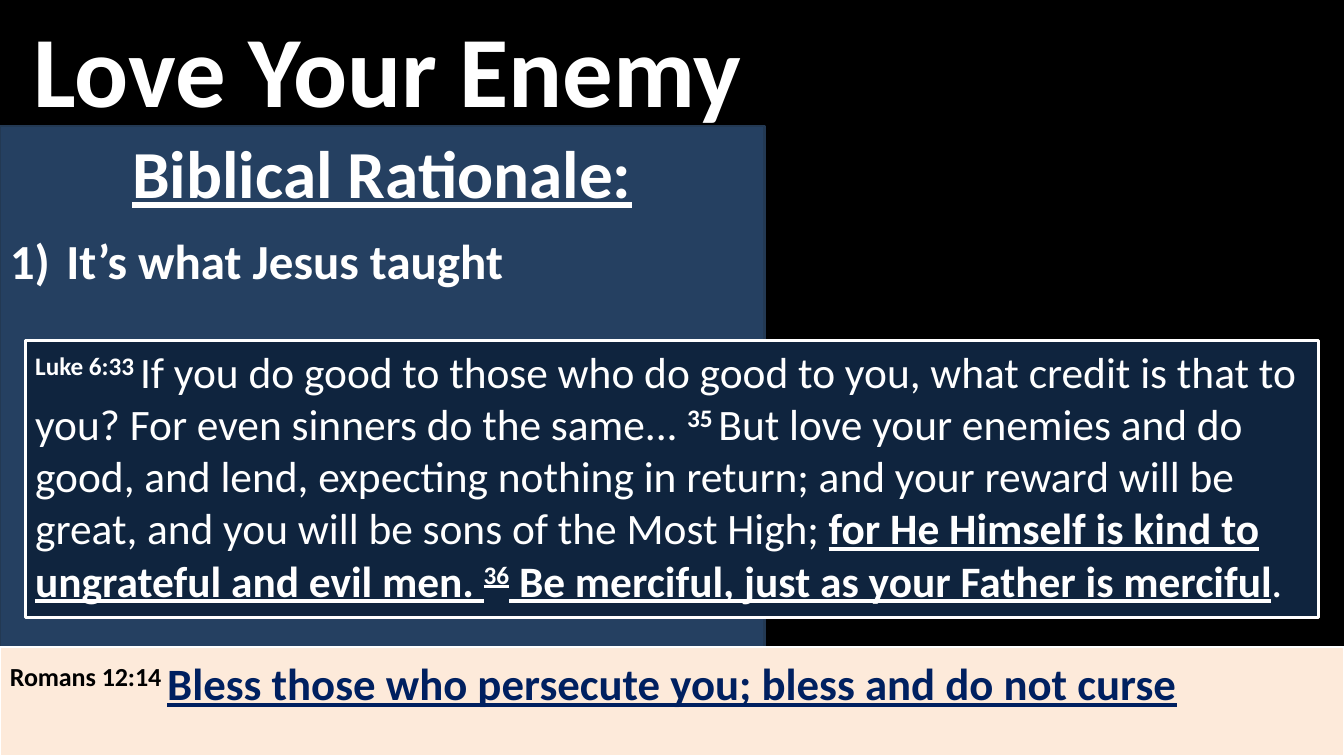
from dataclasses import dataclass
from typing import Optional

import pptx
import pptx.dml.color
import pptx.enum.shapes
import pptx.enum.text
import pptx.oxml.ns
import pptx.util
from lxml import etree

ALIGN = pptx.enum.text.PP_ALIGN
ANCHOR = pptx.enum.text.MSO_ANCHOR


@dataclass(frozen=True)
class Theme:
    font: str = "Calibri"
    black: str = "000000"
    white: str = "FFFFFF"
    panel: str = "254061"
    panel_edge: str = "233953"
    verse: str = "0F243E"
    banner: str = "FDEADA"
    banner_text: str = "002060"
    title_size: int = 72
    heading_size: int = 48
    point_size: int = 35
    banner_size: int = 32
    verse_size: int = 31


@dataclass(frozen=True)
class Panel:
    """A rectangle placed in grid columns and rows."""
    col: float
    row: float
    cols: float
    rows: float
    fill: str
    line: Optional[str] = None
    weight: float = 0
    opacity: int = 100
    anchor: ANCHOR = ANCHOR.TOP


THEME = Theme()
COLS, ROWS = 160, 90
CELL = pptx.util.Inches(1) // 12

TITLE = Panel(0, 0, COLS, 16, THEME.black, opacity=64, anchor=ANCHOR.MIDDLE)
RATIONALE = Panel(0, 15, 91, 75, THEME.panel, THEME.panel_edge, 2)
BANNER = Panel(0, 77, COLS, 13, THEME.banner, THEME.white, 1.5)
VERSE = Panel(3, 40.5, 154, 33, THEME.verse, THEME.white, 2)


def rgb(color: str) -> pptx.dml.color.RGBColor:
    return pptx.dml.color.RGBColor.from_string(color)


def sub(parent, tag: str, **attrs: str):
    return etree.SubElement(parent, pptx.oxml.ns.qn(tag), attrs)


def add_panel(slide, panel: Panel):
    """Draw a panel and return its text frame."""
    box = (round(n * CELL) for n in (panel.col, panel.row, panel.cols, panel.rows))
    sp = slide.shapes.add_shape(pptx.enum.shapes.MSO_SHAPE.RECTANGLE, *box)
    sp.shadow.inherit = False
    sp.fill.solid()
    sp.fill.fore_color.rgb = rgb(panel.fill)
    if panel.opacity < 100:
        color = sp._element.spPr.find(".//" + pptx.oxml.ns.qn("a:srgbClr"))
        sub(color, "a:alpha", val=str(panel.opacity * 1000))
    if panel.line:
        sp.line.color.rgb = rgb(panel.line)
        sp.line.width = pptx.util.Pt(panel.weight)
    else:
        sp.line.fill.background()
    tf = sp.text_frame
    tf.word_wrap = True
    tf.vertical_anchor = panel.anchor
    tf.paragraphs[0].alignment = ALIGN.LEFT
    return tf


def add_text(p, text: str, *, size: float, color: str = THEME.white,
             bold: bool = True, underline: bool = False, raised: bool = False) -> None:
    r = p.add_run()
    r.text = text
    r.font.name = THEME.font
    r.font.size = pptx.util.Pt(size)
    r.font.bold = bold
    r.font.underline = underline
    r.font.color.rgb = rgb(color)
    if raised:
        r._r.get_or_add_rPr().set("baseline", "30000")


def number(p, indent: float) -> None:
    """Number a paragraph as 1) with a hanging indent in inches."""
    pPr = p._p.get_or_add_pPr()
    hang = pptx.util.Inches(indent)
    pPr.set("marL", str(hang))
    pPr.set("indent", str(-hang))
    sub(pPr, "a:buFont", typeface="+mj-lt")
    sub(pPr, "a:buAutoNum", type="arabicParenR")


def main() -> None:
    prs = pptx.Presentation()
    prs.slide_width, prs.slide_height = COLS * CELL, ROWS * CELL
    slide = prs.slides.add_slide(prs.slide_layouts[6])
    slide.background.fill.solid()
    slide.background.fill.fore_color.rgb = rgb(THEME.black)

    # Title
    tf = add_panel(slide, TITLE)
    tf.margin_left = 4 * CELL
    add_text(tf.paragraphs[0], "Love Your Enemy", size=THEME.title_size)

    # Rationale heading and numbered point
    tf = add_panel(slide, RATIONALE)
    p = tf.paragraphs[0]
    p.alignment = ALIGN.CENTER
    add_text(p, "Biblical Rationale:", size=THEME.heading_size, underline=True)
    p = tf.add_paragraph()
    p.alignment = ALIGN.LEFT
    p.space_before = pptx.util.Pt(13.4)
    number(p, 0.56)
    add_text(p, "It’s what Jesus taught", size=THEME.point_size)

    # Banner along the bottom
    p = add_panel(slide, BANNER).paragraphs[0]
    p.line_spacing = 1.07
    add_text(p, "Romans 12:14 ", size=THEME.banner_size, color=THEME.black, raised=True)
    add_text(p, "Bless those who persecute you; bless and do not curse",
             size=THEME.banner_size, color=THEME.banner_text, underline=True)

    # Verse box
    p = add_panel(slide, VERSE).paragraphs[0]
    plain = dict(bold=False)
    verse_no = dict(raised=True)
    stressed = dict(underline=True)
    for text, style in (
        ("Luke 6:33 ", verse_no),
        ("If you do good to those who do good to you, what credit is that to you? "
         "For even sinners do the same... ", plain),
        ("35 ", verse_no),
        ("But love your enemies and do good, and lend, expecting nothing in return; "
         "and your reward will be great, and you will be sons of the Most High; ", plain),
        ("for He Himself is kind to ungrateful and evil men. ", stressed),
        ("36", verse_no | stressed),
        (" Be merciful, just as your Father is merciful", stressed),
        (".", plain),
    ):
        add_text(p, text, size=THEME.verse_size, **style)

    prs.save("out.pptx")


if __name__ == "__main__":
    main()
